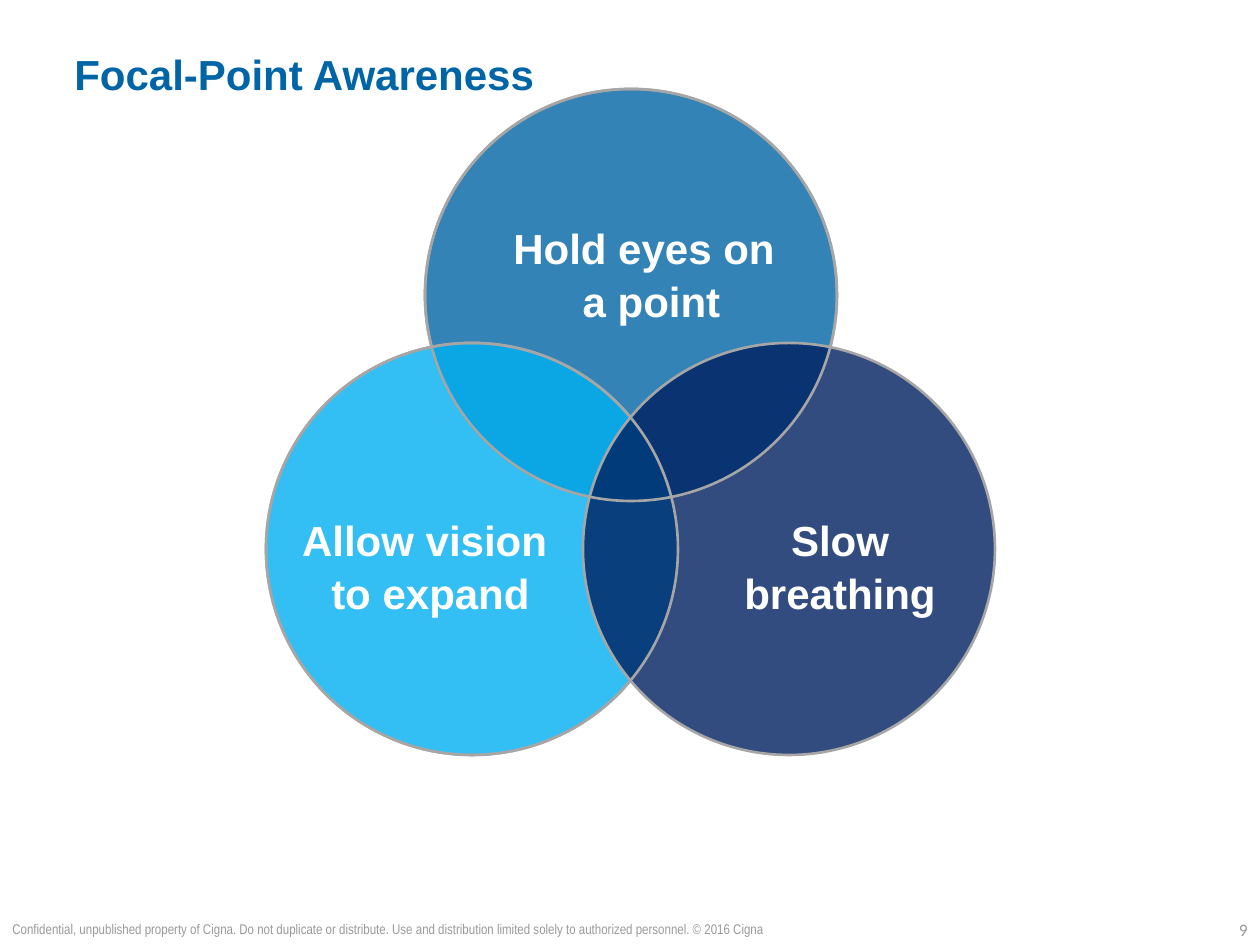
from dataclasses import dataclass
from pptx import Presentation
from pptx import util as u
from pptx.dml.color import RGBColor
from pptx.enum import shapes, text
from pptx.oxml.ns import qn
from lxml import etree

PX = 914400 // 126
AL = text.PP_ALIGN
AN = text.MSO_ANCHOR


@dataclass
class Theme:
    blue: str = "0065A6"
    sky: str = "00B0F0"
    navy: str = "002060"
    ring: str = "A6A6A6"
    note: str = "999999"
    white: str = "FFFFFF"
    face: str = "Arial"
    slim: str = "Arial Narrow"
    page: str = "Calibri"
    big: int = 24
    small: int = 8
    num: int = 10
    alpha: int = 80


T = Theme()
SIZE = 412
DISCS = [(425, 89, T.blue), (266, 343, T.sky), (583, 343, T.navy)]
TITLE = "Focal-Point Awareness"
LABELS = [
    ((501, 210, 301, 115), ["Hold eyes on", "a point"], [AL.LEFT, AL.CENTER]),
    ((610, 502, 460, 115), ["Slow", "breathing"], [AL.CENTER] * 2),
    ((284, 502, 293, 115), ["Allow vision ", "to expand"], [AL.CENTER] * 2),
]
LEGAL = ("Confidential, unpublished property of Cigna. Do not duplicate or "
         "distribute. Use and distribution limited solely to authorized "
         "personnel. © 2016 Cigna")
PAGE = "9"


def px(*nums):
    return [u.Emu(n * PX) for n in nums]


def rgb(code):
    return RGBColor.from_string(code)


def disc(slide, left, top, color=None):
    oval = slide.shapes.add_shape(shapes.MSO_SHAPE.OVAL,
                                  *px(left, top, SIZE, SIZE))
    oval.shadow.inherit = False
    oval.line.color.rgb = rgb(T.ring)
    oval.line.width = u.Pt(1.5)
    if color is None:
        oval.fill.background()
        return
    oval.fill.solid()
    oval.fill.fore_color.rgb = rgb(color)
    tint = oval.fill._xPr.find(qn("a:solidFill"))[0]
    etree.SubElement(tint, qn("a:alpha")).set("val", str(T.alpha * 1000))


def label(slide, box, lines, aligns, face, size, color,
          bold=False, pad=6, anchor=AN.TOP, wrap=True):
    frame = slide.shapes.add_textbox(*px(*box)).text_frame
    frame.word_wrap = wrap
    frame.vertical_anchor = anchor
    frame.margin_top = px(pad)[0]
    frame.text = "\n".join(lines)
    for para, align in zip(frame.paragraphs, aligns):
        para.alignment = align
        if len(lines) > 1:
            para.line_spacing = 1.05
        for run in para.runs:
            font = run.font
            font.name, font.size, font.bold = face, u.Pt(size), bold
            font.color.rgb = rgb(color)


def main():
    deck = Presentation()
    deck.slide_width, deck.slide_height = px(1260, 945)
    slide = deck.slides.add_slide(deck.slide_layouts[6])
    for left, top, color in DISCS:
        disc(slide, left, top, color)
    label(slide, (62, 38, 1134, 89), [TITLE], [AL.LEFT],
          T.face, T.big, T.blue, True, 11)
    for box, lines, aligns in LABELS:
        label(slide, box, lines, aligns, T.face, T.big, T.white, True, 10)
    for left, top, color in DISCS[:2]:
        disc(slide, left, top)
    label(slide, (0, 913, 966, 32), [LEGAL], [AL.LEFT],
          T.slim, T.small, T.note, anchor=AN.MIDDLE)
    label(slide, (966, 913, 294, 29), [PAGE], [AL.RIGHT],
          T.page, T.num, T.note)
    deck.save("out.pptx")


if __name__ == "__main__":
    main()
